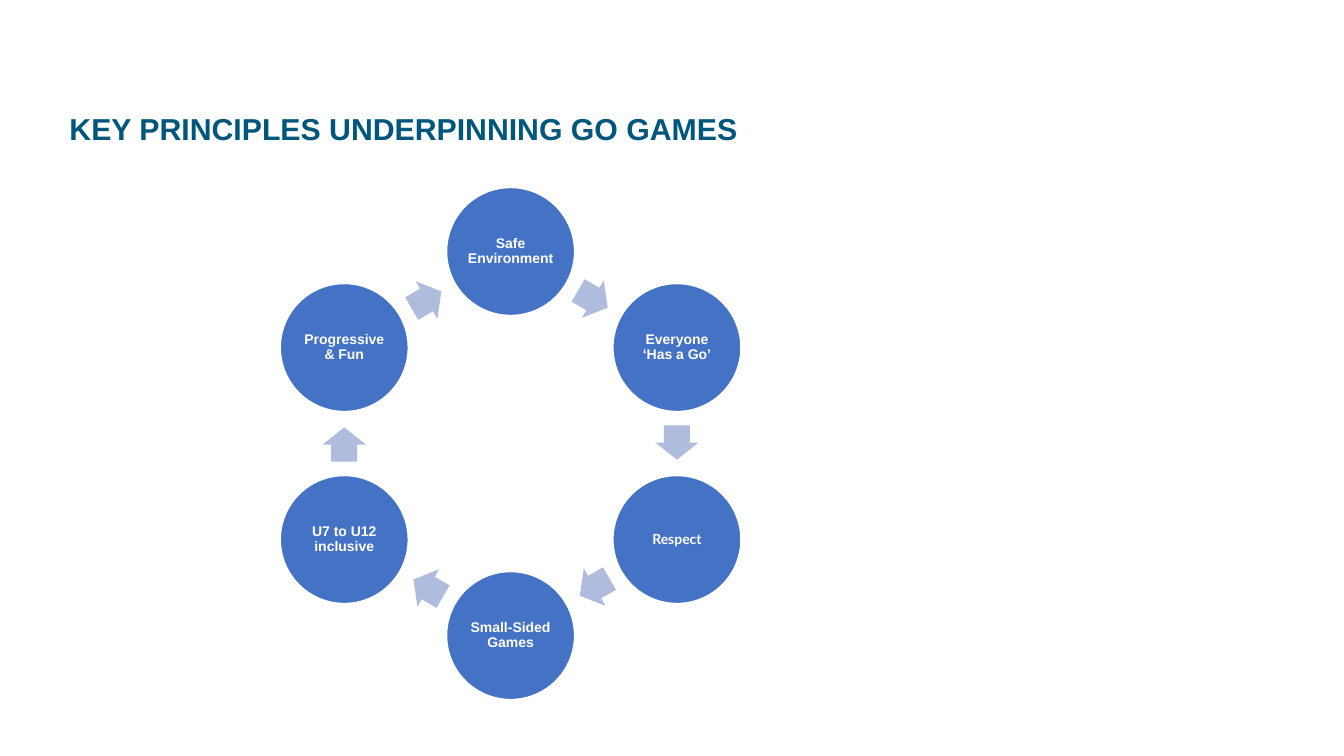
import math

import pptx
import pptx.dml.color
import pptx.enum.shapes
import pptx.enum.text
import pptx.util

TITLE_BLUE = pptx.dml.color.RGBColor(0x00, 0x56, 0x7C)
CIRCLE_BLUE = pptx.dml.color.RGBColor(0x44, 0x72, 0xC4)
ARROW_BLUE = pptx.dml.color.RGBColor(0xB0, 0xBC, 0xDE)
WHITE = pptx.dml.color.RGBColor(0xFF, 0xFF, 0xFF)

# Each principle with its font, clockwise from the top of the ring
PRINCIPLES = [
    ("Safe Environment", "Arial"),
    ("Everyone ‘Has a Go’", "Arial"),
    ("Respect", "Lato"),
    ("Small-Sided Games", "Arial"),
    ("U7 to U12 inclusive", "Arial"),
    ("Progressive & Fun", "Arial"),
]


class CycleSlide:
    """A slide on a grid of 100 columns by 100 rows."""

    ring_column, ring_row = 37.99, 58.67
    ring_radius = 25.4  # ring lengths are in rows
    circle_size = 16.93
    arrow_length, arrow_width = 4.53, 5.73
    arrow_setback = 0.13

    def __init__(self, deck):
        self.column = deck.slide_width / 100
        self.row = deck.slide_height / 100
        self.slide = deck.slides.add_slide(deck.slide_layouts[6])
        self.ring = self.slide.shapes.add_group_shape()

    def set_text(self, frame, words, font_name, size, color):
        frame.word_wrap = True
        frame.vertical_anchor = pptx.enum.text.MSO_ANCHOR.MIDDLE
        paragraph = frame.paragraphs[0]
        paragraph.text = words
        paragraph.line_spacing = 0.9
        font = paragraph.font
        font.name, font.size, font.bold = font_name, pptx.util.Pt(size), True
        font.color.rgb = color
        return paragraph

    def title(self, words, column, row, columns, rows):
        box = self.slide.shapes.add_textbox(
            round(column * self.column), round(row * self.row),
            round(columns * self.column), round(rows * self.row))
        self.set_text(box.text_frame, words, "Arial", 21.6, TITLE_BLUE)

    def ring_shape(self, preset, angle, distance, width, height, color, setback=0):
        """Centre a shape at a clockwise angle from the top of the ring."""
        turn = math.radians(angle)
        x = (self.ring_column * self.column
             + (distance * math.sin(turn) - setback * math.cos(turn)) * self.row)
        y = (self.ring_row - distance * math.cos(turn)
             - setback * math.sin(turn)) * self.row
        width, height = width * self.row, height * self.row
        shape = self.ring.shapes.add_shape(
            preset, round(x - width / 2), round(y - height / 2),
            round(width), round(height))
        shape.shadow.inherit = False
        shape.fill.solid()
        shape.fill.fore_color.rgb = color
        return shape

    def circle(self, words, font_name, angle):
        circle = self.ring_shape(
            pptx.enum.shapes.MSO_SHAPE.OVAL, angle, self.ring_radius,
            self.circle_size, self.circle_size, CIRCLE_BLUE)
        circle.line.color.rgb = WHITE
        circle.line.width = pptx.util.Pt(1)
        frame = circle.text_frame
        frame.margin_left = frame.margin_right = pptx.util.Inches(0.01)
        frame.margin_top = frame.margin_bottom = pptx.util.Inches(0.01)
        label = self.set_text(frame, words, font_name, 10, WHITE)
        label.alignment = pptx.enum.text.PP_ALIGN.CENTER

    def arrow(self, angle, step):
        """Point clockwise, midway between two neighbouring circles."""
        midway = self.ring_radius * math.cos(math.radians(step / 2))
        arrow = self.ring_shape(
            pptx.enum.shapes.MSO_SHAPE.RIGHT_ARROW, angle, midway,
            self.arrow_length, self.arrow_width, ARROW_BLUE, self.arrow_setback)
        arrow.line.fill.background()
        arrow.adjustments[0], arrow.adjustments[1] = 0.6, 0.5
        arrow.rotation = angle


def main():
    deck = pptx.Presentation()
    deck.slide_width = pptx.util.Inches(13.33)
    deck.slide_height = pptx.util.Inches(7.5)
    page = CycleSlide(deck)
    page.title("KEY PRINCIPLES UNDERPINNING GO GAMES", 4.43, 11.87, 54.84, 10.8)
    step = 360 / len(PRINCIPLES)
    for index, (principle, font_name) in enumerate(PRINCIPLES):
        page.circle(principle, font_name, index * step)
        page.arrow((index + 0.5) * step, step)
    deck.save("out.pptx")


if __name__ == "__main__":
    main()
